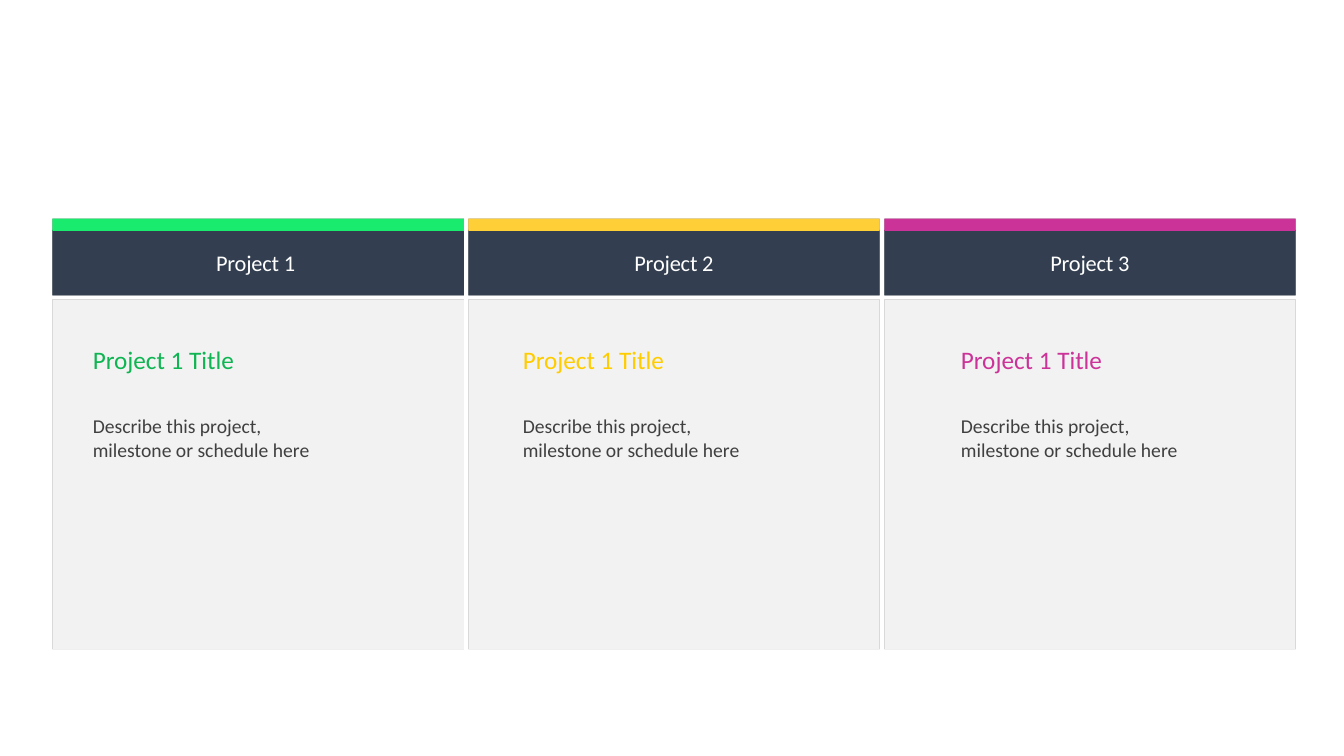
from dataclasses import dataclass

from lxml.etree import SubElement
from pptx import Presentation
from pptx.dml.color import RGBColor
from pptx.enum.shapes import MSO_SHAPE
from pptx.enum.text import MSO_ANCHOR, MSO_AUTO_SIZE, PP_ALIGN
from pptx.oxml.ns import qn
from pptx.shapes.autoshape import Shape
from pptx.slide import Slide
from pptx.util import Inches, Pt

NAVY = RGBColor(0x33, 0x3F, 0x50)
PANEL_GRAY = RGBColor(0xF2, 0xF2, 0xF2)
TEXT_GRAY = RGBColor(0x40, 0x40, 0x40)
WHITE = RGBColor(0xFF, 0xFF, 0xFF)
GREEN = RGBColor(0x19, 0xEB, 0x6E)
DARK_GREEN = RGBColor(0x0F, 0xB5, 0x52)
YELLOW = RGBColor(0xFF, 0xCF, 0x37)
GOLD = RGBColor(0xFF, 0xCC, 0x00)
MAGENTA = RGBColor(0xCC, 0x33, 0x99)

# Grid in inches: three equal columns between the first and last left edges
FIRST_LEFT, LAST_LEFT, COLUMN_WIDTH = 0.52, 8.77, 4.08
COLUMN_PITCH = (LAST_LEFT - FIRST_LEFT) / 2


@dataclass(frozen=True)
class Row:
    top: float
    height: float


STRIPE = Row(2.17, 0.12)
HEADER = Row(2.28, 0.65)
PANEL = Row(2.97, 3.47)
TITLE = Row(3.42, 0.3)
DESCRIPTION = Row(4.11, 0.47)


@dataclass(frozen=True)
class Project:
    heading: str
    stripe_color: RGBColor
    title_color: RGBColor
    indent: float


PROJECTS = [
    Project("Project 1 ", GREEN, DARK_GREEN, 0.4),
    Project("Project 2", YELLOW, GOLD, 0.54),
    Project("Project 3", MAGENTA, MAGENTA, 0.76),
]


def write_text(shape: Shape, text: str, *, size: float, color: RGBColor,
               align: PP_ALIGN = PP_ALIGN.LEFT, spacing: int = 0) -> None:
    """Write one paragraph; spacing is in hundredths of a point."""
    shape.text_frame.word_wrap = True
    paragraph = shape.text_frame.paragraphs[0]
    paragraph.alignment = align
    run = paragraph.add_run()
    run.text = text
    run.font.name = "Calibri"
    run.font.size = Pt(size)
    run.font.color.rgb = color
    if spacing:
        run.font._element.set("spc", str(spacing))


def add_block(slide: Slide, left: float, row: Row, color: RGBColor) -> Shape:
    """Add a filled rectangle with a tight half-transparent shadow."""
    shape = slide.shapes.add_shape(
        MSO_SHAPE.RECTANGLE, Inches(left), Inches(row.top),
        Inches(COLUMN_WIDTH), Inches(row.height))
    shape.fill.solid()
    shape.fill.fore_color.rgb = color
    shape.line.fill.background()
    shape.shadow.inherit = False
    effects = shape._element.spPr.find(qn("a:effectLst"))
    shadow = SubElement(effects, qn("a:outerShdw"), blurRad="0", dist="0", dir="0")
    shadow_color = SubElement(shadow, qn("a:srgbClr"), val="000000")
    SubElement(shadow_color, qn("a:alpha"), val="50000")
    return shape


def add_label(slide: Slide, left: float, row: Row, width: float, text: str, *,
              size: float, color: RGBColor) -> None:
    box = slide.shapes.add_textbox(
        Inches(left), Inches(row.top), Inches(width), Inches(row.height))
    frame = box.text_frame
    frame.margin_left = frame.margin_right = 0
    frame.margin_top = frame.margin_bottom = 0
    frame.auto_size = MSO_AUTO_SIZE.SHAPE_TO_FIT_TEXT
    write_text(box, text, size=size, color=color)


def add_project(slide: Slide, left: float, project: Project) -> None:
    # Header, panel and coloured stripe
    header = add_block(slide, left, HEADER, NAVY)
    header.text_frame.vertical_anchor = MSO_ANCHOR.MIDDLE
    write_text(header, project.heading, size=16, color=WHITE,
               align=PP_ALIGN.CENTER, spacing=-10)
    add_block(slide, left, PANEL, PANEL_GRAY)
    add_block(slide, left, STRIPE, project.stripe_color)

    # Title and description
    text_left = left + project.indent
    add_label(slide, text_left, TITLE, 1.42, "Project 1 Title",
              size=18, color=project.title_color)
    add_label(slide, text_left, DESCRIPTION, 2.22,
              "Describe this project, milestone or schedule here",
              size=14, color=TEXT_GRAY)


def main() -> None:
    presentation = Presentation()
    presentation.slide_width = Inches(13.33)
    presentation.slide_height = Inches(7.5)
    slide = presentation.slides.add_slide(presentation.slide_layouts[6])
    for index, project in enumerate(PROJECTS):
        add_project(slide, FIRST_LEFT + index * COLUMN_PITCH, project)
    presentation.save("out.pptx")


if __name__ == "__main__":
    main()
